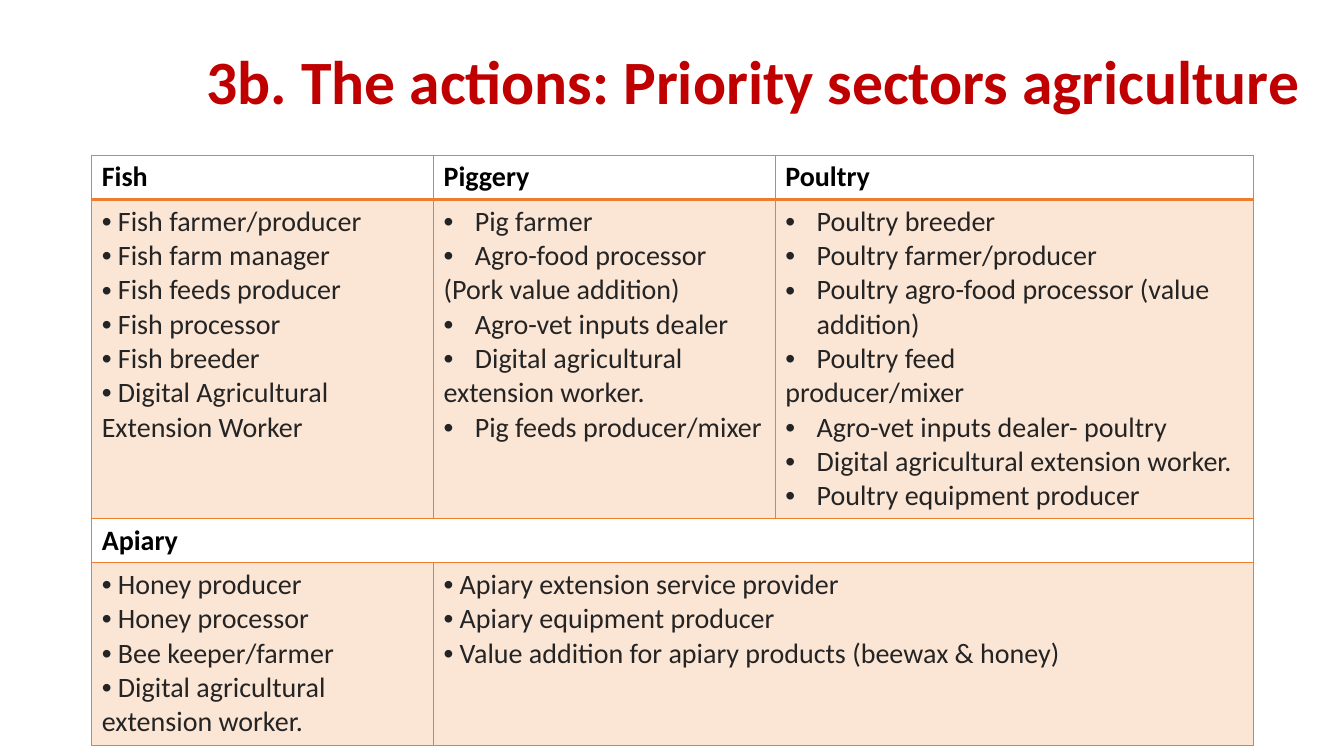
"""Build the slide that lists priority agriculture sectors and their actions."""
from dataclasses import dataclass

from lxml import etree
from pptx import Presentation
from pptx import util as u
from pptx.dml import color
from pptx.enum import text
from pptx.oxml import ns


@dataclass(frozen=True)
class Theme:
    font: str = "Calibri"
    title: str = "C00000"
    heading: str = "000000"
    body: str = "242424"
    accent: str = "ED7D31"
    tint: int = 20
    title_size: int = 44
    table_size: int = 20
    line: int = 1
    heavy_line: int = 2


@dataclass(frozen=True)
class Item:
    words: str
    bullet: bool = True


@dataclass(frozen=True)
class Sector:
    row: int
    col: int
    items: tuple[Item, ...]
    indent: float = 0
    span: int = 1
    heading: bool = False


THEME = Theme()
COLUMNS = (3.39, 3.39, 4.74)
ROWS = (0.44, 3.16, 0.44, 1.81)
SECTORS = (
    Sector(0, 0, (Item("Fish", False),), heading=True),
    Sector(0, 1, (Item("Piggery", False),), heading=True),
    Sector(0, 2, (Item("Poultry", False),), heading=True),
    Sector(1, 0, (
        Item(" Fish farmer/producer"), Item(" Fish farm manager"),
        Item(" Fish feeds producer"), Item(" Fish processor"),
        Item(" Fish breeder"), Item(" Digital Agricultural"),
        Item("Extension Worker", False))),
    Sector(1, 1, (
        Item("Pig farmer"), Item("Agro-food processor"),
        Item("(Pork value addition)", False), Item("Agro-vet inputs dealer"),
        Item("Digital agricultural"), Item("extension worker.", False),
        Item("Pig feeds producer/mixer")), indent=0.31),
    Sector(1, 2, (
        Item("Poultry breeder"), Item("Poultry farmer/producer"),
        Item("Poultry agro-food processor (value addition)"),
        Item("Poultry feed"), Item("producer/mixer", False),
        Item("Agro-vet inputs dealer- poultry"),
        Item("Digital agricultural extension worker."),
        Item("Poultry equipment producer")), indent=0.31),
    Sector(2, 0, (Item("Apiary", False),), span=3, heading=True),
    Sector(3, 0, (
        Item(" Honey producer"), Item(" Honey processor"),
        Item(" Bee keeper/farmer"), Item(" Digital agricultural"),
        Item("extension worker.", False))),
    Sector(3, 1, (
        Item(" Apiary extension service provider"),
        Item(" Apiary equipment producer"),
        Item(" Value addition for apiary products (beewax & honey)")), span=2),
)


def add_run(p, words: str, size: int, rgb: str, bold: bool) -> None:
    r = p.add_run()
    r.text = words
    formats = {"name": THEME.font, "size": u.Pt(size), "bold": bold}
    for name, value in formats.items():
        setattr(r.font, name, value)
    r.font.color.rgb = color.RGBColor.from_string(rgb)


def add_bullet(p, indent: float) -> None:
    pPr = p._p.get_or_add_pPr()
    pPr.set("marL", str(u.Inches(indent)))
    pPr.set("indent", str(-u.Inches(indent)))
    etree.SubElement(pPr, ns.qn("a:buFont"), typeface="Arial")
    etree.SubElement(pPr, ns.qn("a:buChar"), char="•")


def set_borders(cell, widths: dict[str, int]) -> None:
    tcPr = cell._tc.get_or_add_tcPr()
    for i, (side, width) in enumerate(widths.items()):
        ln = etree.Element(ns.qn(f"a:ln{side}"), w=str(u.Pt(width)))
        fill = etree.SubElement(ln, ns.qn("a:solidFill"))
        etree.SubElement(fill, ns.qn("a:srgbClr"), val=THEME.accent)
        tcPr.insert(i, ln)


def set_tint(cell) -> None:
    cell.fill.solid()
    cell.fill.fore_color.rgb = color.RGBColor.from_string(THEME.accent)
    rgb = cell._tc.tcPr.find(".//" + ns.qn("a:srgbClr"))
    etree.SubElement(rgb, ns.qn("a:alpha"), val=str(THEME.tint * 1000))


def fill_sector(tbl, sector: Sector) -> None:
    cell = tbl.cell(sector.row, sector.col)
    if sector.span > 1:
        cell.merge(tbl.cell(sector.row, sector.col + sector.span - 1))
    tf = cell.text_frame
    rgb = THEME.heading if sector.heading else THEME.body
    for i, item in enumerate(sector.items):
        p = tf.add_paragraph() if i else tf.paragraphs[0]
        if item.bullet:
            add_bullet(p, sector.indent)
        add_run(p, item.words, THEME.table_size, rgb, sector.heading)


def add_sector_table(s) -> None:
    frame = s.shapes.add_table(
        len(ROWS), len(COLUMNS), u.Inches(0.91), u.Inches(1.54),
        u.Inches(sum(COLUMNS)), u.Inches(sum(ROWS)))
    tbl = frame.table
    tbl.first_row = tbl.horz_banding = False
    for column, width in zip(tbl.columns, COLUMNS):
        column.width = u.Inches(width)
    heading_rows = {sector.row for sector in SECTORS if sector.heading}
    for i, (row, height) in enumerate(zip(tbl.rows, ROWS)):
        row.height = u.Inches(height)
        top = THEME.heavy_line if i == 1 else THEME.line
        bottom = THEME.heavy_line if i == 0 else THEME.line
        for cell in row.cells:
            if i in heading_rows:
                cell.fill.background()
            else:
                set_tint(cell)
            set_borders(cell, {"L": THEME.line, "R": THEME.line,
                               "T": top, "B": bottom})
    for sector in SECTORS:
        fill_sector(tbl, sector)


def add_title(s, words: str) -> None:
    sp = s.shapes.title
    place = {"left": 1.95, "top": 0.13, "width": 11.07, "height": 1.41}
    for name, value in place.items():
        setattr(sp, name, u.Inches(value))
    tf = sp.text_frame
    formats = {"word_wrap": True, "auto_size": text.MSO_AUTO_SIZE.NONE,
               "vertical_anchor": text.MSO_ANCHOR.MIDDLE}
    for name, value in formats.items():
        setattr(tf, name, value)
    p = tf.paragraphs[0]
    p.alignment = text.PP_ALIGN.LEFT
    p.line_spacing = 0.9
    add_run(p, words, THEME.title_size, THEME.title, True)


def main() -> None:
    prs = Presentation()
    prs.slide_width, prs.slide_height = u.Inches(13.33), u.Inches(7.5)
    s = prs.slides.add_slide(prs.slide_layouts[5])
    add_title(s, "3b. The actions: Priority sectors agriculture")
    add_sector_table(s)
    prs.save("out.pptx")


if __name__ == "__main__":
    main()
